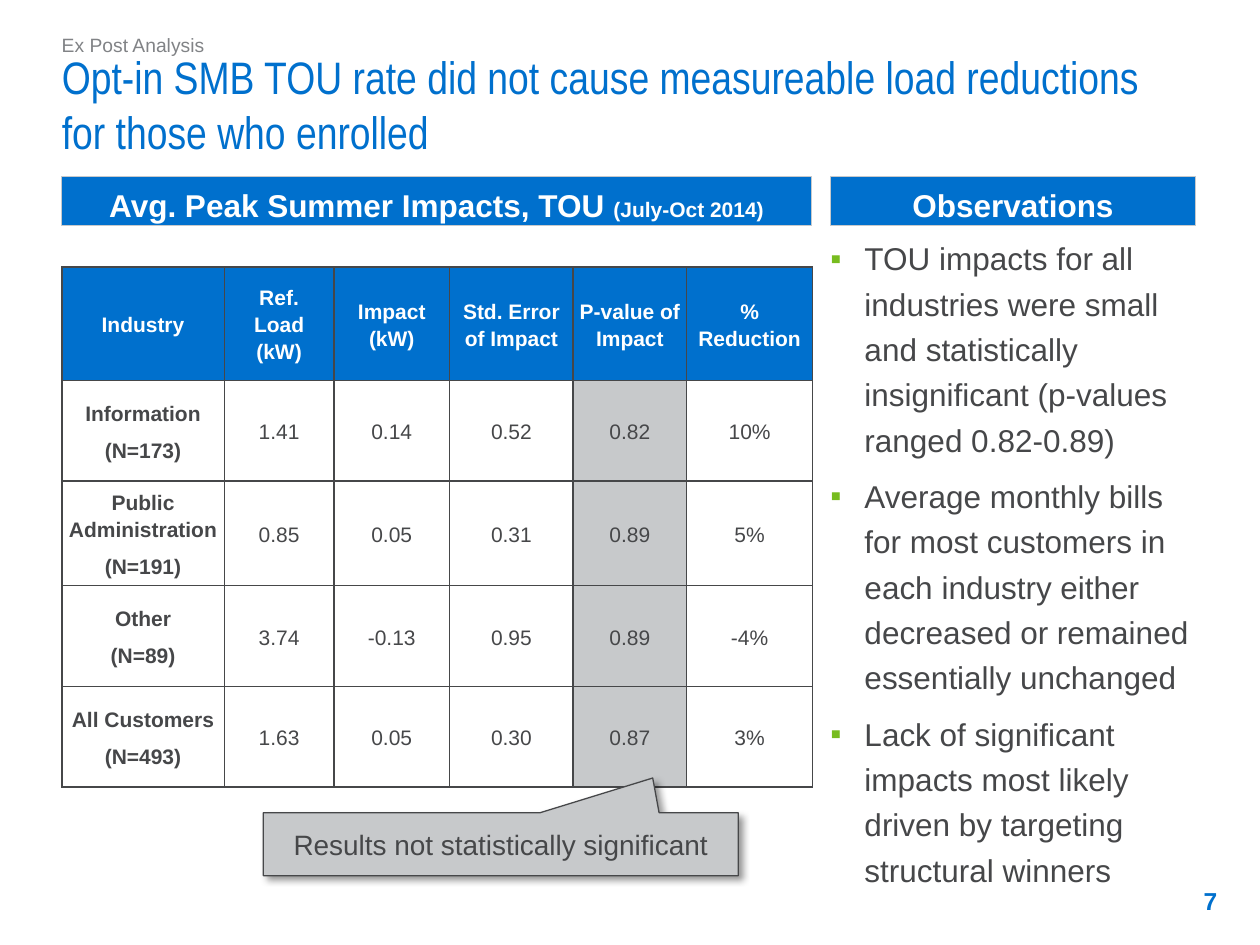
from lxml import etree
from pptx import Presentation
from pptx.dml.color import RGBColor
from pptx.enum import shapes, text
from pptx.oxml import ns
from pptx.util import Pt

HUES = {"blue": "0070CD", "dark": "464749", "gray": "C7C9CB", "mid": "818386",
        "green": "77BC1F", "white": "FFFFFF", "black": "000000"}
ALIGN = {"l": text.PP_ALIGN.LEFT, "c": text.PP_ALIGN.CENTER, "r": text.PP_ALIGN.RIGHT}
ANCHOR = {"t": text.MSO_ANCHOR.TOP, "m": text.MSO_ANCHOR.MIDDLE, "b": text.MSO_ANCHOR.BOTTOM}
LEFT, RIGHT = 35.3, 474.5


def rgb(hue):
    return RGBColor.from_string(HUES[hue])


def sub(node, tag, **attrs):
    return etree.SubElement(node, ns.qn("a:" + tag), {k: str(v) for k, v in attrs.items()})


def mark(para, hue, indent=19.5):
    """Give a paragraph a square bullet with a hanging indent."""
    props = para._p.get_or_add_pPr()
    props.set("marL", str(Pt(indent)))
    props.set("indent", str(-Pt(indent)))
    sub(sub(props, "buClr"), "srgbClr", val=HUES[hue])
    sub(props, "buFont", typeface="Arial")
    sub(props, "buChar", char="▪")


def put(frame, paras, size=18, hue="dark", bold=False, font="Arial", align="l",
        anchor="t", pad=(7.2, 3.6, 7.2, 3.6), line=None, before=0, after=0,
        bullet=None, wrap=True):
    """Fill a text frame; a paragraph is a string or a list of (string, size) runs."""
    frame.word_wrap = wrap
    frame.auto_size = text.MSO_AUTO_SIZE.NONE
    frame.vertical_anchor = ANCHOR[anchor]
    frame.margin_left, frame.margin_top, frame.margin_right, frame.margin_bottom = map(Pt, pad)
    for i, runs in enumerate(paras):
        para = frame.add_paragraph() if i else frame.paragraphs[0]
        if bullet:
            mark(para, bullet)
        para.alignment = ALIGN[align]
        para.space_before, para.space_after = Pt(before if i else 0), Pt(after)
        if line:
            para.line_spacing = line
        for words, points in [(runs, size)] if isinstance(runs, str) else runs:
            for j, part in enumerate(words.split("\n")):
                if j:
                    para.add_line_break()
                run = para.add_run()
                run.text = part
                run.font.size, run.font.bold, run.font.name = Pt(points), bold, font
                run.font.color.rgb = rgb(hue)


class Deck:
    def __init__(self):
        self.file = Presentation()
        self.file.slide_width, self.file.slide_height = Pt(720), Pt(540)
        self.slide = self.file.slides.add_slide(self.file.slide_layouts[1])

    def holder(self, index, box, paras, **style):
        item = self.slide.placeholders[index]
        item.left, item.top, item.width, item.height = map(Pt, box)
        put(item.text_frame, paras, **style)

    def label(self, box, words, **style):
        item = self.slide.shapes.add_textbox(*map(Pt, box))
        put(item.text_frame, [words], **style)

    def block(self, kind, box, runs, fill, edge, **style):
        item = self.slide.shapes.add_shape(kind, *map(Pt, box))
        item.shadow.inherit = False
        item.fill.solid()
        item.fill.fore_color.rgb = rgb(fill)
        item.line.color.rgb = rgb(edge)
        item.line.width = Pt(0.75)
        put(item.text_frame, [runs], align="c", anchor="m", **style)
        return item

    def banner(self, left, width, runs):
        self.block(shapes.MSO_SHAPE.RECTANGLE, (left, 100.8, width, 28.1), runs, "blue",
                   "gray", hue="white", bold=True, line=1.2, after=2.6)

    def callout(self, box, words, tip):
        item = self.block(shapes.MSO_SHAPE.RECTANGULAR_CALLOUT, box, words,
                          "gray", "dark", size=16)
        item.adjustments[0], item.adjustments[1] = tip
        effects = item._element.spPr.find(ns.qn("a:effectLst"))
        shade = sub(effects, "outerShdw", blurRad=Pt(4), dist=Pt(3), dir=45 * 60000,
                    algn="tl", rotWithShape=0)
        sub(sub(shade, "srgbClr", val=HUES["black"]), "alpha", val=40000)

    def cell(self, cell, paras, fill, **style):
        props = cell._tc.get_or_add_tcPr()
        for side in "LRTB":
            edge = sub(props, "ln" + side, w=Pt(1))
            sub(sub(edge, "solidFill"), "srgbClr", val=HUES["dark"])
        cell.fill.solid()
        cell.fill.fore_color.rgb = rgb(fill)
        put(cell.text_frame, paras, size=12, align="c", line=1.15, before=3, **style)
        cell.vertical_anchor = ANCHOR["m"]
        cell.margin_left = cell.margin_right = Pt(3.6)
        cell.margin_top = cell.margin_bottom = Pt(3.6)

    def table(self, left, top, widths, heights, heads, rows, shaded):
        """Draw a grid with a blue head row, bold first column and one shaded column."""
        frame = self.slide.shapes.add_table(len(heights), len(widths), Pt(left), Pt(top),
                                            Pt(sum(widths)), Pt(sum(heights)))
        grid = frame.table
        grid.horz_banding = False
        for col, width in zip(grid.columns, widths):
            col.width = Pt(width)
        for row, height in zip(grid.rows, heights):
            row.height = Pt(height)
        for c, head in enumerate(heads):
            self.cell(grid.cell(0, c), [head], "blue", hue="white", bold=True,
                      after=3 if c == shaded else 5)
        for r, (name, count, *values) in enumerate(rows, 1):
            self.cell(grid.cell(r, 0), [name, f"(N={count})"], "white", bold=True, after=3)
            for c, value in enumerate(values, 1):
                self.cell(grid.cell(r, c), [value], "gray" if c == shaded else "white", after=3)


def main():
    deck = Deck()
    flush = (0, 3.6, 7.2, 3.6)
    deck.holder(1, (RIGHT, 128.9, 216.7, 353.5), [
        "TOU impacts for all industries were small and statistically insignificant "
        "(p-values ranged 0.82-0.89)",
        "Average monthly bills for most customers in each industry either decreased "
        "or remained essentially unchanged",
        "Lack of significant impacts most likely driven by targeting structural winners",
    ], pad=flush, line=1.2, before=3.6, after=2.6, bullet="green")
    deck.table(
        LEFT, 152.6, [92.9, 62.6, 66.2, 70.6, 64.8, 72], [64.8] + [57.6] * 4,
        ["Industry", "Ref.\nLoad (kW)", "Impact (kW)", "Std. Error of Impact",
         "P-value of Impact", "%\nReduction"],
        [("Information", 173, "1.41", "0.14", "0.52", "0.82", "10%"),
         ("Public\nAdministration", 191, "0.85", "0.05", "0.31", "0.89", "5%"),
         ("Other", 89, "3.74", "-0.13", "0.95", "0.89", "-4%"),
         ("All Customers", 493, "1.63", "0.05", "0.30", "0.87", "3%")],
        shaded=4)
    deck.holder(0, (LEFT, 41, 648.7, 53.3), [
        "Opt-in SMB TOU rate did not cause measureable load reductions for those who enrolled",
    ], size=26, hue="blue", font="Arial Narrow", anchor="b", pad=flush)
    deck.label((655.9, 500.4, 46.8, 28.8), "7", size=14, hue="blue", bold=True,
               align="r", anchor="m")
    deck.label((LEFT, 13, 554.4, 20.2), "Ex Post Analysis", size=11, hue="mid",
               pad=flush, line=1.2, after=2.6, wrap=False)
    deck.banner(LEFT, 428.4, [("Avg. Peak Summer Impacts, TOU ", 18), ("(July-Oct 2014)", 12)])
    deck.banner(RIGHT, 208.8, "Observations")
    deck.callout((150.5, 464.4, 271.4, 36), "Results not statistically significant",
                 (0.32, -1.05))
    deck.file.save("out.pptx")


if __name__ == "__main__":
    main()
